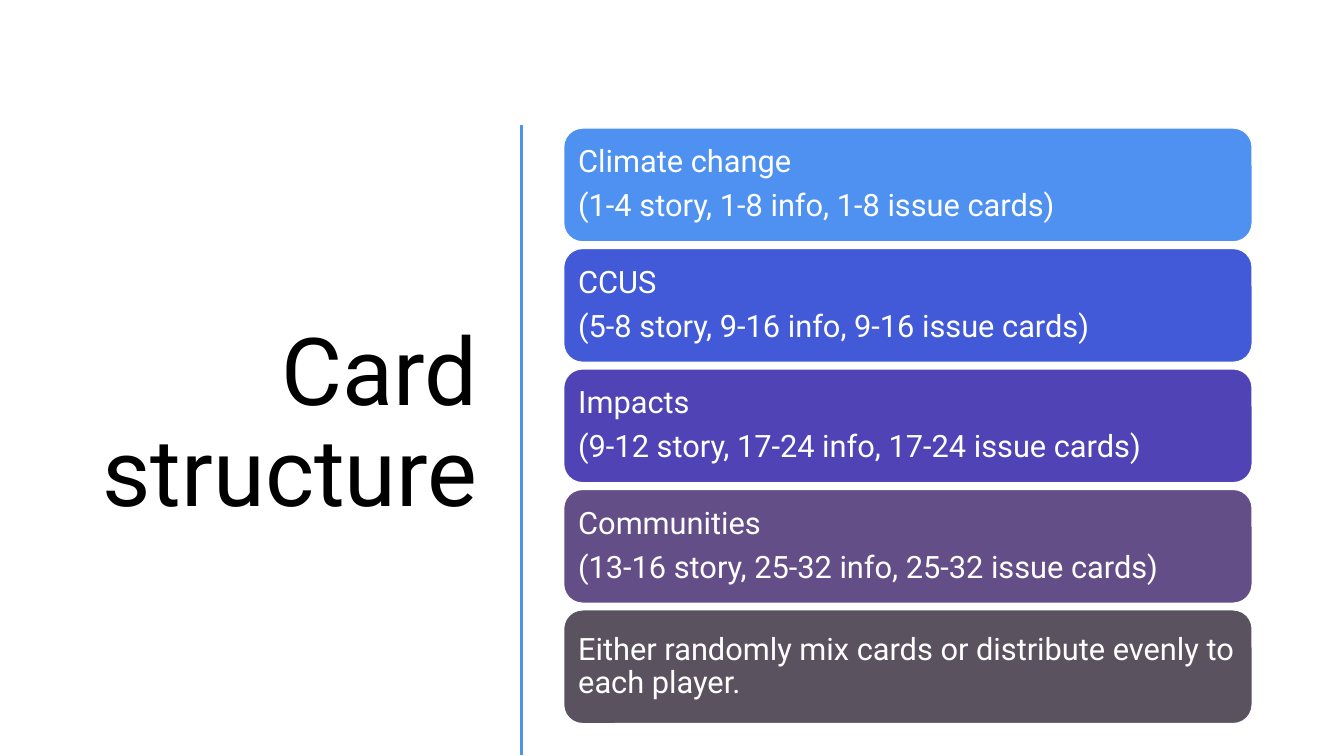
from dataclasses import dataclass

from lxml.etree import SubElement
from pptx import Presentation
from pptx.dml.color import RGBColor
from pptx.enum.shapes import MSO_CONNECTOR, MSO_SHAPE
from pptx.enum.text import MSO_ANCHOR, PP_ALIGN
from pptx.oxml.ns import qn
from pptx.slide import Slide
from pptx.text.text import TextFrame
from pptx.util import Inches, Pt

FONT = "Roboto"
WHITE = "FFFFFF"
BLACK = "000000"
BLUE = "4E91F0"

CARD_LEFT, CARD_TOP = 5.59, 1.27
CARD_WIDTH, CARD_HEIGHT = 6.83, 1.13
CARD_PITCH = 1.195
CARD_INSET = 0.09


@dataclass(frozen=True)
class Card:
    fill: str
    lines: tuple[str, ...]


CARDS = (
    Card(BLUE, ("Climate change", "(1-4 story, 1-8 info, 1-8 issue cards)")),
    Card("435AD8", ("CCUS", "(5-8 story, 9-16 info, 9-16 issue cards)")),
    Card("5043B5", ("Impacts", "(9-12 story, 17-24 info, 17-24 issue cards)")),
    Card("644E87", ("Communities", "(13-16 story, 25-32 info, 25-32 issue cards)")),
    Card("5B5260", ("Either randomly mix cards or distribute evenly to each player.",)),
)


def rgb(color: str) -> RGBColor:
    return RGBColor.from_string(color)


def write_lines(tf: TextFrame, lines: tuple[str, ...], size: float, color: str,
                align: PP_ALIGN) -> None:
    """Fill a frame with one paragraph per line, centred vertically."""
    tf.word_wrap = True
    tf.vertical_anchor = MSO_ANCHOR.MIDDLE
    for i, line in enumerate(lines):
        p = tf.paragraphs[0] if i == 0 else tf.add_paragraph()
        p.alignment = align
        p.line_spacing = 0.9
        if i < len(lines) - 1:
            p.space_after = Pt(0.35 * size)
        r = p.add_run()
        r.text = line
        r.font.name = FONT
        r.font.size = Pt(size)
        r.font.color.rgb = rgb(color)


def add_title(s: Slide) -> None:
    box = s.shapes.add_textbox(Inches(0.52), Inches(1.17), Inches(4.31), Inches(6.11))
    write_lines(box.text_frame, ("Card structure",), 67, BLACK, PP_ALIGN.RIGHT)


def add_divider(s: Slide) -> None:
    x = Inches(5.17)
    line = s.shapes.add_connector(MSO_CONNECTOR.STRAIGHT, x, Inches(1.24), x, Inches(7.49))
    line.line.color.rgb = rgb(BLUE)
    line.line.width = Pt(2)
    SubElement(line._element.spPr, qn("a:effectLst"))


def add_card(s: Slide, card: Card, top: float) -> None:
    sp = s.shapes.add_shape(MSO_SHAPE.ROUNDED_RECTANGLE, Inches(CARD_LEFT), Inches(top),
                            Inches(CARD_WIDTH), Inches(CARD_HEIGHT))
    sp.shadow.inherit = False
    sp.fill.solid()
    sp.fill.fore_color.rgb = rgb(card.fill)
    sp.line.color.rgb = rgb(WHITE)
    sp.line.width = Pt(1)
    tf = sp.text_frame
    tf.margin_left = tf.margin_right = Inches(CARD_INSET)
    tf.margin_top = tf.margin_bottom = Inches(CARD_INSET)
    write_lines(tf, card.lines, 22, WHITE, PP_ALIGN.LEFT)


def main() -> None:
    prs = Presentation()
    prs.slide_width, prs.slide_height = Inches(13.33), Inches(7.5)
    s = prs.slides.add_slide(prs.slide_layouts[6])
    add_title(s)
    add_divider(s)
    for i, card in enumerate(CARDS):
        add_card(s, card, CARD_TOP + i * CARD_PITCH)
    prs.save("out.pptx")


if __name__ == "__main__":
    main()
